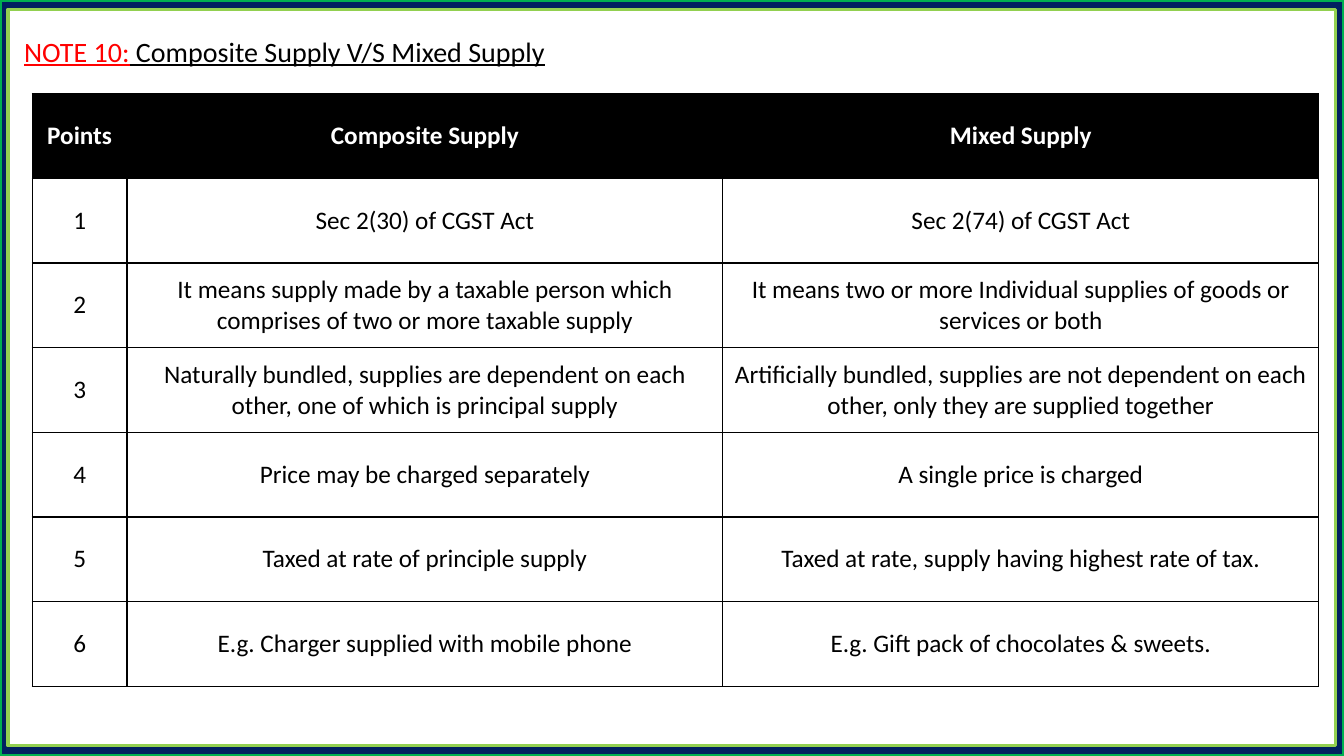
from lxml import etree
from pptx import Presentation
from pptx.dml.color import RGBColor
from pptx.enum import shapes, text
from pptx.oxml import ns
from pptx.util import Inches, Pt

FONT = "Calibri"
HEX = {
    "navy": "002060", "green": "00B050", "lime": "92D050",
    "red": "FF0000", "black": "000000", "white": "FFFFFF",
}
WIDTHS = (0.94, 5.91, 5.91)
HEIGHT = 0.84
HEADS = ("Points", "Composite Supply", "Mixed Supply")
POINTS = (
    ("Sec 2(30) of CGST Act", "Sec 2(74) of CGST Act"),
    ("It means supply made by a taxable person which comprises of two or more taxable supply",
     "It means two or more Individual supplies of goods or services or both"),
    ("Naturally bundled, supplies are dependent on each other, one of which is principal supply",
     "Artificially bundled, supplies are not dependent on each other, "
     "only they are supplied together"),
    ("Price may be charged separately", "A single price is charged"),
    ("Taxed at rate of principle supply", "Taxed at rate, supply having highest rate of tax."),
    ("E.g. Charger supplied with mobile phone", "E.g. Gift pack of chocolates & sweets."),
)


def color(name):
    """Return the named colour."""
    return RGBColor.from_string(HEX[name])


def style(run, size, tint, bold=False, under=False):
    """Set the font of a run."""
    font = run.font
    font.name, font.size = FONT, Pt(size)
    font.bold, font.underline = bold, under
    font.color.rgb = color(tint)


def add_frame(slide, box, fill, line, width):
    """Add one rectangle of the page border."""
    rect = slide.shapes.add_shape(shapes.MSO_SHAPE.RECTANGLE, *map(Inches, box))
    rect.shadow.inherit = False
    rect.fill.solid()
    rect.fill.fore_color.rgb = color(fill)
    rect.line.color.rgb = color(line)
    rect.line.width = Pt(width)


def add_title(slide, box, parts):
    """Add the underlined title from (text, colour) parts."""
    frame = slide.shapes.add_textbox(*map(Inches, box)).text_frame
    frame.word_wrap = True
    frame.auto_size = text.MSO_AUTO_SIZE.SHAPE_TO_FIT_TEXT
    for words, tint in parts:
        run = frame.paragraphs[0].add_run()
        run.text = words
        style(run, 20, tint, under=True)


def add_border(cell):
    """Draw a thin black line on each side of a cell."""
    props = cell._tc.get_or_add_tcPr()
    for side in ("lnL", "lnR", "lnT", "lnB"):
        line = etree.SubElement(props, ns.qn(f"a:{side}"), w=str(Pt(1)))
        fill = etree.SubElement(line, ns.qn("a:solidFill"))
        etree.SubElement(fill, ns.qn("a:srgbClr"), val=HEX["black"])


def fill_cell(cell, words, head):
    """Write and format one table cell."""
    add_border(cell)
    if head:
        cell.fill.solid()
        cell.fill.fore_color.rgb = color("black")
    else:
        cell.fill.background()
    cell.vertical_anchor = text.MSO_ANCHOR.MIDDLE
    para = cell.text_frame.paragraphs[0]
    para.text = words
    para.alignment = text.PP_ALIGN.CENTER
    style(para.runs[0], 18, "white" if head else "black", bold=head)


def add_grid(slide, left, top, rows):
    """Add the comparison table."""
    size = (left, top, sum(WIDTHS), HEIGHT * len(rows))
    table = slide.shapes.add_table(len(rows), len(WIDTHS), *map(Inches, size)).table
    for col, width in zip(table.columns, WIDTHS):
        col.width = Inches(width)
    for r, row in enumerate(rows):
        table.rows[r].height = Inches(HEIGHT)
        for c, words in enumerate(row):
            fill_cell(table.cell(r, c), words, r == 0)


def main():
    """Build the slide and save it."""
    deck = Presentation()
    deck.slide_width, deck.slide_height = Inches(13.33), Inches(7.5)
    slide = deck.slides.add_slide(deck.slide_layouts[6])
    add_frame(slide, (0, 0, 13.33, 7.5), "navy", "green", 3)
    add_frame(slide, (0.08, 0.09, 13.17, 7.31), "white", "lime", 2.25)
    add_title(slide, (0.14, 0.29, 5.45, 0.44),
              (("NOTE 10:", "red"), (" Composite Supply V/S Mixed Supply", "black")))
    rows = [HEADS] + [(str(n), *pair) for n, pair in enumerate(POINTS, 1)]
    add_grid(slide, 0.32, 0.93, rows)
    deck.save("out.pptx")


if __name__ == "__main__":
    main()
